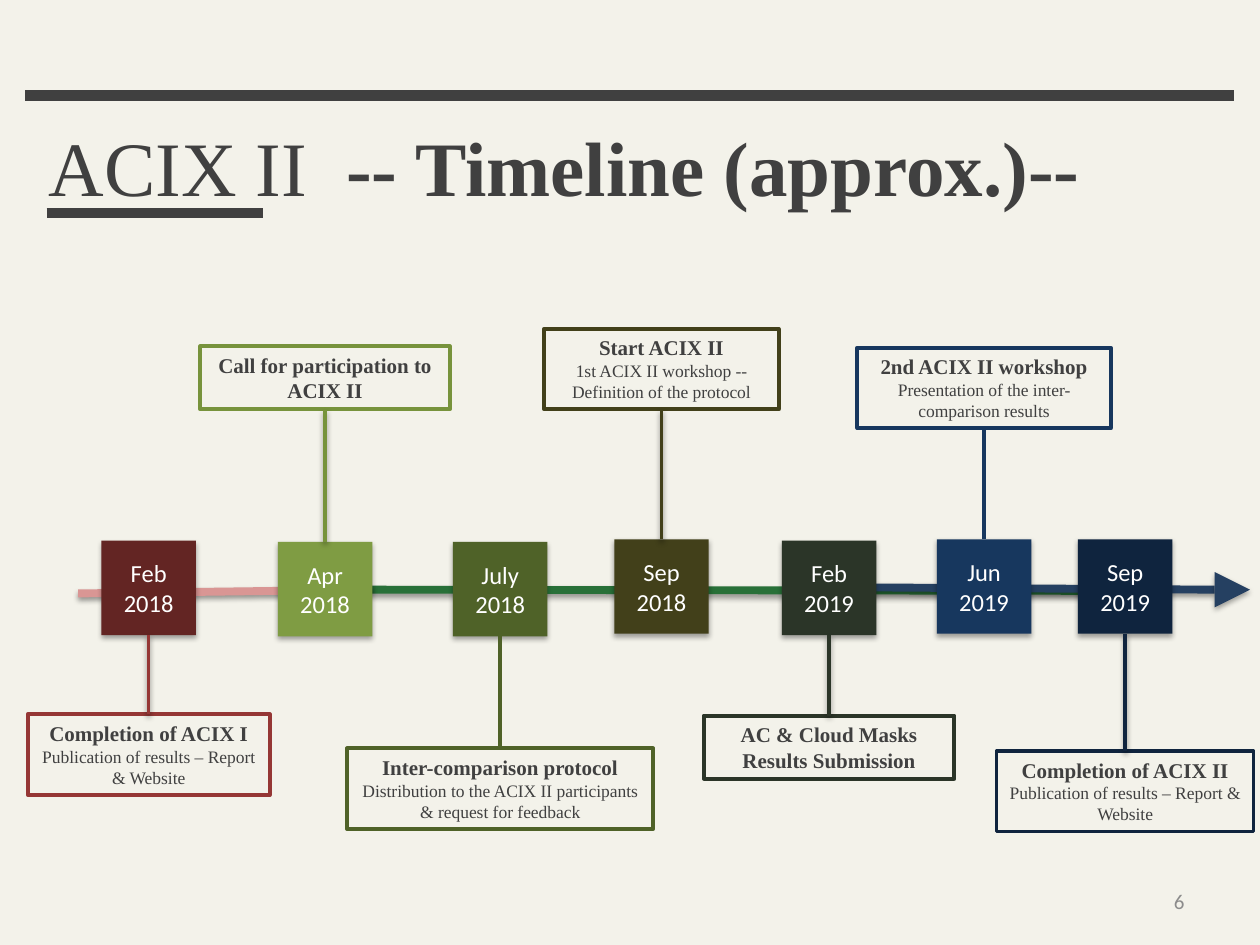
from lxml.etree import SubElement
from pptx import Presentation
from pptx.dml.color import RGBColor
from pptx.enum.shapes import MSO_CONNECTOR, MSO_SHAPE
from pptx.enum.text import MSO_ANCHOR, PP_ALIGN
from pptx.oxml.ns import qn
from pptx.util import Inches, Pt

hue = RGBColor.from_string
deck = Presentation()
deck.slide_width, deck.slide_height = Inches(10), Inches(7.5)
col = deck.slide_width / 100  # 100 columns by 75 rows of square cells
row = deck.slide_height / 75
slide = deck.slides.add_slide(deck.slide_layouts[5])
slide.background.fill.solid()
slide.background.fill.fore_color.rgb = hue("F3F2EA")
INK = "404040"


def shade(shape, alpha=0):
    """Replace the theme shadow by a soft drop, or by none."""
    props = shape._element.spPr
    for old in props.findall(qn("a:effectLst")):
        props.remove(old)
    effect = SubElement(props, qn("a:effectLst"))
    if alpha:
        drop = SubElement(effect, qn("a:outerShdw"), blurRad=str(Pt(3.1)),
                          dist=str(Pt(1.7)), dir="5400000", rotWithShape="0")
        tint = SubElement(drop, qn("a:srgbClr"), val="000000")
        SubElement(tint, qn("a:alpha"), val=str(alpha * 1000))


def rule(x1, y1, x2, y2, tone, width, alpha=0):
    line = slide.shapes.add_connector(
        MSO_CONNECTOR.STRAIGHT, round(x1 * col), round(y1 * row),
        round(x2 * col), round(y2 * row))
    line.line.color.rgb = hue(tone)
    line.line.width = Pt(width)
    shade(line, alpha)
    return line


# Title between its two rules
rule(2, 7.6, 97.9, 7.6, INK, 6)
title = slide.shapes.title
title.left, title.top = round(2 * col), round(8.4 * row)
title.width, title.height = round(94.9 * col), round(6.4 * row)
frame = title.text_frame
frame.margin_left, frame.margin_top = round(1.85 * col), round(1.1 * row)
frame.vertical_anchor = MSO_ANCHOR.TOP
head = frame.paragraphs[0]
head.alignment = PP_ALIGN.LEFT
for text, bold in (("ACIX II", False), ("  -- Timeline (approx.)--", True)):
    run = head.add_run()
    run.text = text
    run.font.bold = bold
head.font.name, head.font.size = "Times New Roman", Pt(44)
head.font.color.rgb = hue(INK)
rule(3.7, 16.9, 20.9, 16.9, INK, 5.5)

# Page number
page = slide.shapes.add_textbox(
    round(71.7 * col), round(69.5 * row), round(23.3 * col), round(4 * row))
page.text_frame.word_wrap = True
page.text_frame.vertical_anchor = MSO_ANCHOR.MIDDLE
para = page.text_frame.paragraphs[0]
para.text, para.alignment = "6", PP_ALIGN.RIGHT
para.font.name, para.font.size = "Calibri", Pt(12)
para.font.color.rgb = hue("8C8C8C")

# Time axis with its arrowhead
rule(29.5, 46.8, 89.2, 46.9, "287038", 4.5, 38)
rule(6.2, 47.1, 29.5, 46.8, "D99694", 4.5, 38)
rule(65.8, 46.6, 96.4, 46.8, "254061", 4.5, 38)
tip = slide.shapes.add_shape(
    MSO_SHAPE.ISOSCELES_TRIANGLE, round(96.4 * col), round(45.4 * row),
    round(2.8 * col), round(2.8 * row))
tip.rotation = 90
tip.fill.solid()
tip.fill.fore_color.rgb = hue("254061")
tip.line.fill.background()
shade(tip, 35)

# Steps: date, middle, top, fill | card top, width, line, border, stem shadow, text
SIDE = 7.5
steps = [
    ("Feb 2018", 11.8, 42.9, "632523", 56.7, 19.2, "953735", 2.25, 38,
     ["Completion of ACIX I", "Publication of results – Report & Website"]),
    ("Apr 2018", 25.8, 43, "7F9C43", 27.5, 19.8, "77933C", 2.25, 38,
     ["Call for participation to ACIX II"]),
    ("July 2018", 39.7, 43, "4F6228", 59.4, 24.3, "4F6228", 2.25, 0,
     ["Inter-comparison protocol",
      "Distribution to the ACIX II participants & request for feedback"]),
    ("Sep 2018", 52.5, 42.8, "42401A", 26.1, 18.6, "42401A", 2.25, 38,
     ["Start ACIX II", "1st ACIX II workshop -- Definition of the protocol"]),
    ("Feb 2019", 65.8, 42.9, "2B3528", 56.8, 19.9, "2B3528", 2.25, 38,
     ["AC & Cloud Masks Results Submission"]),
    ("Jun 2019", 78.1, 42.8, "17375E", 27.6, 20.1, "17375E", 2.25, 0,
     ["2nd ACIX II workshop", "Presentation of the inter-comparison results"]),
    ("Sep 2019", 89.3, 42.8, "0F243E", 59.6, 20.4, "0F243E", 2, 38,
     ["Completion of ACIX II", "Publication of results – Report & Website"]),
]
for date, mid, top, fill, high, wide, tone, edge, alpha, words in steps:
    # Dated block on the axis
    block = slide.shapes.add_shape(
        MSO_SHAPE.RECTANGLE, round((mid - SIDE / 2) * col), round(top * row),
        round(SIDE * col), round(SIDE * row))
    block.fill.solid()
    block.fill.fore_color.rgb = hue(fill)
    block.line.fill.background()
    shade(block, 35)
    block.text_frame.word_wrap = True
    block.text_frame.vertical_anchor = MSO_ANCHOR.MIDDLE
    para = block.text_frame.paragraphs[0]
    para.text, para.alignment = date, PP_ALIGN.CENTER
    para.font.name, para.font.size = "Calibri", Pt(14)
    para.font.color.rgb = hue("FFFFFF")

    # Card above or below it, taller where it has details
    tall = 6.4 if len(words) > 1 else 5
    card = slide.shapes.add_shape(
        MSO_SHAPE.RECTANGLE, round((mid - wide / 2) * col), round(high * row),
        round(wide * col), round(tall * row))
    card.fill.background()
    card.line.color.rgb = hue(tone)
    card.line.width = Pt(edge)
    shade(card)
    frame = card.text_frame
    frame.word_wrap = True
    frame.vertical_anchor = MSO_ANCHOR.TOP
    for i, text in enumerate(words):
        para = frame.add_paragraph() if i else frame.paragraphs[0]
        para.text, para.alignment = text, PP_ALIGN.CENTER
        para.font.name, para.font.size = "Times New Roman", Pt(10 if i else 12)
        para.font.bold = i == 0
        para.font.color.rgb = hue(INK)

    # Stem that joins the two
    start, end = (0, 2) if high < top else (2, 0)
    stem = rule(mid, top, mid, high, tone, 2, alpha)
    stem.begin_connect(block, start)
    stem.end_connect(card, end)

deck.save("out.pptx")
